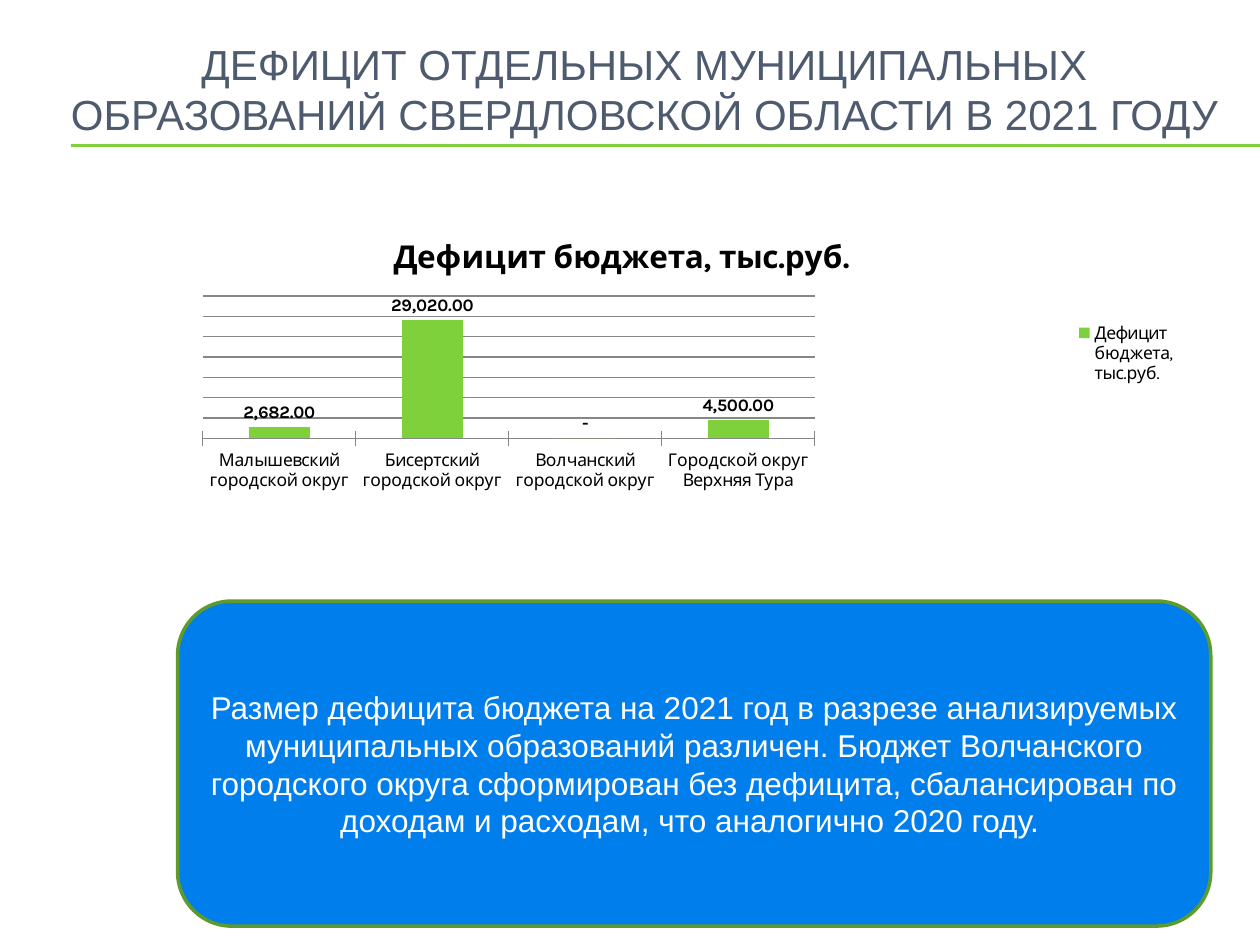
from dataclasses import dataclass

from lxml import etree
from pptx import Presentation
from pptx import util as u
from pptx.chart import data as cd
from pptx.dml.color import RGBColor
from pptx.enum import chart as ce, shapes, text
from pptx.oxml import ns


@dataclass(frozen=True)
class Theme:
    accent: str = "7FD13B"
    border: str = "5E9B2C"
    panel: str = "007EEB"
    heading: str = "4E5B6F"
    ink: str = "000000"
    grid: str = "868686"
    white: str = "FFFFFF"
    font: str = "Arial"
    chart_font: str = "Karla"
    title_size: int = 24
    body_size: int = 18
    chart_title_size: int = 18
    chart_size: int = 10


class Deck:
    COLS, ROWS = 100, 75

    def __init__(self, theme):
        self.theme = theme
        self.prs = Presentation()
        self.prs.slide_width, self.prs.slide_height = u.Inches(10), u.Inches(7.5)
        self.s = self.prs.slides.add_slide(self.prs.slide_layouts[5])

    def x(self, cols):
        return round(self.prs.slide_width * cols / self.COLS)

    def y(self, rows):
        return round(self.prs.slide_height * rows / self.ROWS)

    def box(self, col, row, cols, rows):
        return self.x(col), self.y(row), self.x(cols), self.y(rows)

    def font(self, f, size, color, name, bold=False):
        f.size, f.name, f.bold = u.Pt(size), name, bold
        f.color.rgb = RGBColor.from_string(color)

    def centered(self, tf, content, size, color):
        tf.word_wrap = True
        tf.vertical_anchor = text.MSO_ANCHOR.MIDDLE
        p = tf.paragraphs[0]
        p.alignment = text.PP_ALIGN.CENTER
        r = p.add_run()
        r.text = content
        self.font(r.font, size, color, self.theme.font)

    def rule(self, col, row, end):
        ln = self.s.shapes.add_connector(
            shapes.MSO_CONNECTOR.STRAIGHT,
            self.x(col), self.y(row), self.x(end), self.y(row))
        self.outline(ln.line, self.theme.accent, 0.75)
        etree.SubElement(ln._element.spPr, ns.qn("a:effectLst"))

    def outline(self, line, color, width):
        line.color.rgb = RGBColor.from_string(color)
        line.width = u.Pt(width)

    def title(self, content, *cells):
        sp = self.s.shapes.title
        sp.left, sp.top, sp.width, sp.height = self.box(*cells)
        self.centered(sp.text_frame, content, self.theme.title_size, self.theme.heading)

    def panel(self, content, *cells):
        sp = self.s.shapes.add_shape(
            shapes.MSO_SHAPE.ROUNDED_RECTANGLE, *self.box(*cells))
        sp.shadow.inherit = False
        sp.fill.solid()
        sp.fill.fore_color.rgb = RGBColor.from_string(self.theme.panel)
        self.outline(sp.line, self.theme.border, 2)
        self.centered(sp.text_frame, content, self.theme.body_size, self.theme.white)

    def layout(self, parent, before, inner, **shares):
        for old in parent.findall(ns.qn("c:layout")):
            parent.remove(old)
        lay = etree.Element(ns.qn("c:layout"))
        manual = etree.SubElement(lay, ns.qn("c:manualLayout"))
        settings = {"layoutTarget": "inner"} if inner else {}
        settings.update(xMode="edge", yMode="edge", **shares)
        for tag, val in settings.items():
            etree.SubElement(manual, ns.qn("c:" + tag)).set("val", str(val))
        parent.find(ns.qn(before)).addprevious(lay)

    def columns(self, name, values, fmt, *cells):
        t = self.theme
        data = cd.CategoryChartData(number_format=fmt)
        data.categories = list(values)
        data.add_series(name, list(values.values()))
        ch = self.s.shapes.add_chart(
            ce.XL_CHART_TYPE.COLUMN_CLUSTERED, *self.box(*cells), data).chart
        self.font(ch.font, t.chart_size, t.ink, t.chart_font)

        ch.has_title = True
        r = ch.chart_title.text_frame.paragraphs[0].add_run()
        r.text = name
        self.font(r.font, t.chart_title_size, t.ink, t.chart_font, True)

        ch.has_legend = True
        ch.legend.position = ce.XL_LEGEND_POSITION.RIGHT
        ch.legend.include_in_layout = False
        self.layout(ch.legend._element, "c:overlay", False, x=0.9, y=0.27, w=0.1, h=0.18)

        cat, val = ch.category_axis, ch.value_axis
        cat.major_tick_mark = ce.XL_TICK_MARK.CROSS
        self.outline(cat.format.line, t.grid, 0.75)
        val.visible = False
        val.minimum_scale, val.maximum_scale, val.major_unit = 0, 35000, 5000
        val.has_major_gridlines = True
        self.outline(val.major_gridlines.format.line, t.grid, 0.75)

        plot = ch.plots[0]
        plot.gap_width, plot.vary_by_categories = 150, False
        fill = plot.series[0].format.fill
        fill.solid()
        fill.fore_color.rgb = RGBColor.from_string(t.accent)
        plot.has_data_labels = True
        labels = plot.data_labels
        labels.show_value = True
        labels.position = ce.XL_LABEL_POSITION.OUTSIDE_END
        labels.number_format, labels.number_format_is_linked = fmt, False
        self.font(labels.font, t.chart_size, t.ink, t.chart_font, True)
        area = ch._chartSpace.chart.plotArea
        self.layout(area, "c:barChart", True, x=0.12, y=0.21, w=0.55, h=0.37)


def main():
    d = Deck(Theme())
    for row in (11.5, 11.6):
        d.rule(5.6, row, d.COLS)
    d.title("ДЕФИЦИТ ОТДЕЛЬНЫХ МУНИЦИПАЛЬНЫХ ОБРАЗОВАНИЙ "
            "СВЕРДЛОВСКОЙ ОБЛАСТИ В 2021 ГОДУ", 3.9, 1.6, 94.5, 10.9)
    d.panel("Размер дефицита бюджета на 2021 год в разрезе анализируемых "
            "муниципальных образований различен. Бюджет Волчанского городского "
            "округа сформирован без дефицита, сбалансирован по доходам и "
            "расходам, что аналогично 2020 году. ", 14.1, 47.7, 82, 25.8)
    deficits = {
        "Малышевский городской округ": 2682,
        "Бисертский городской округ": 29020,
        "Волчанский городской округ": 0,
        "Городской округ Верхняя Тура": 4500,
    }
    d.columns("Дефицит бюджета, тыс.руб. ", deficits,
              '#,##0.00;-#,##0.00;"-"', 5.5, 17.1, 88.3, 30.5)
    d.prs.save("out.pptx")


if __name__ == "__main__":
    main()
